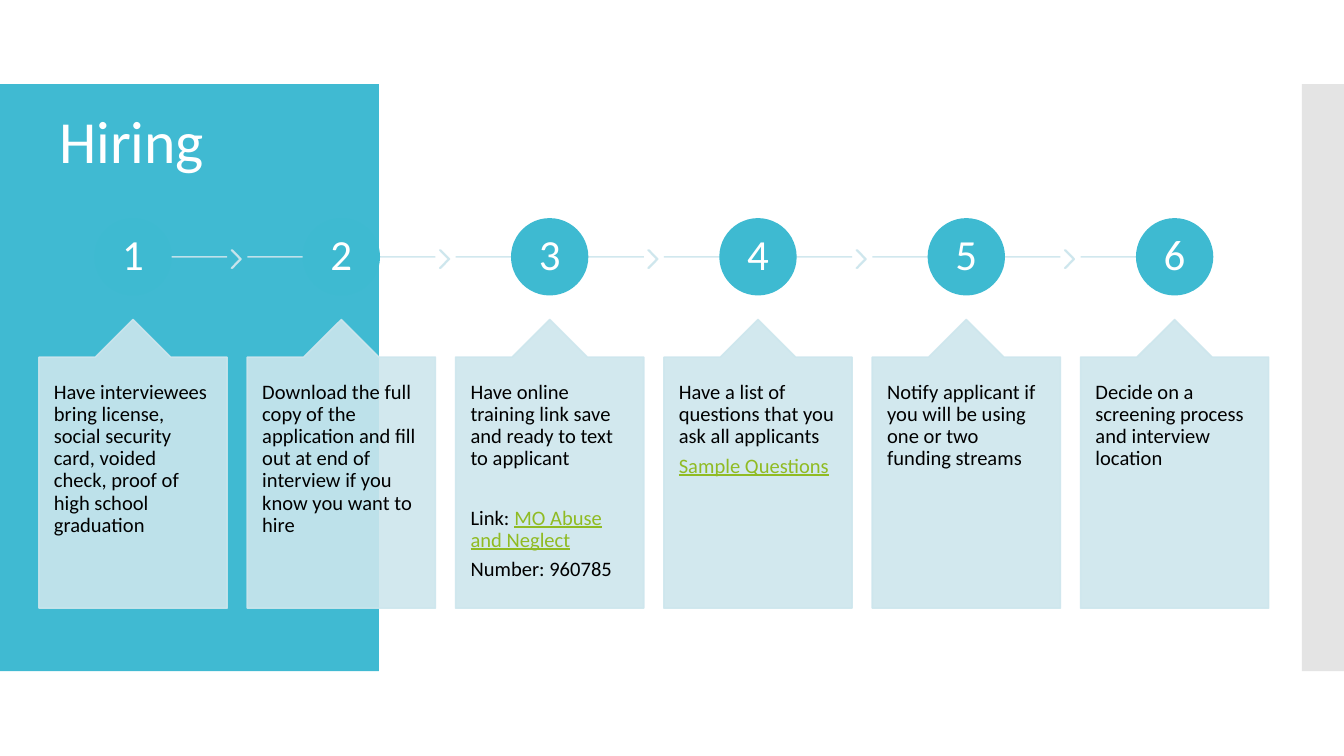
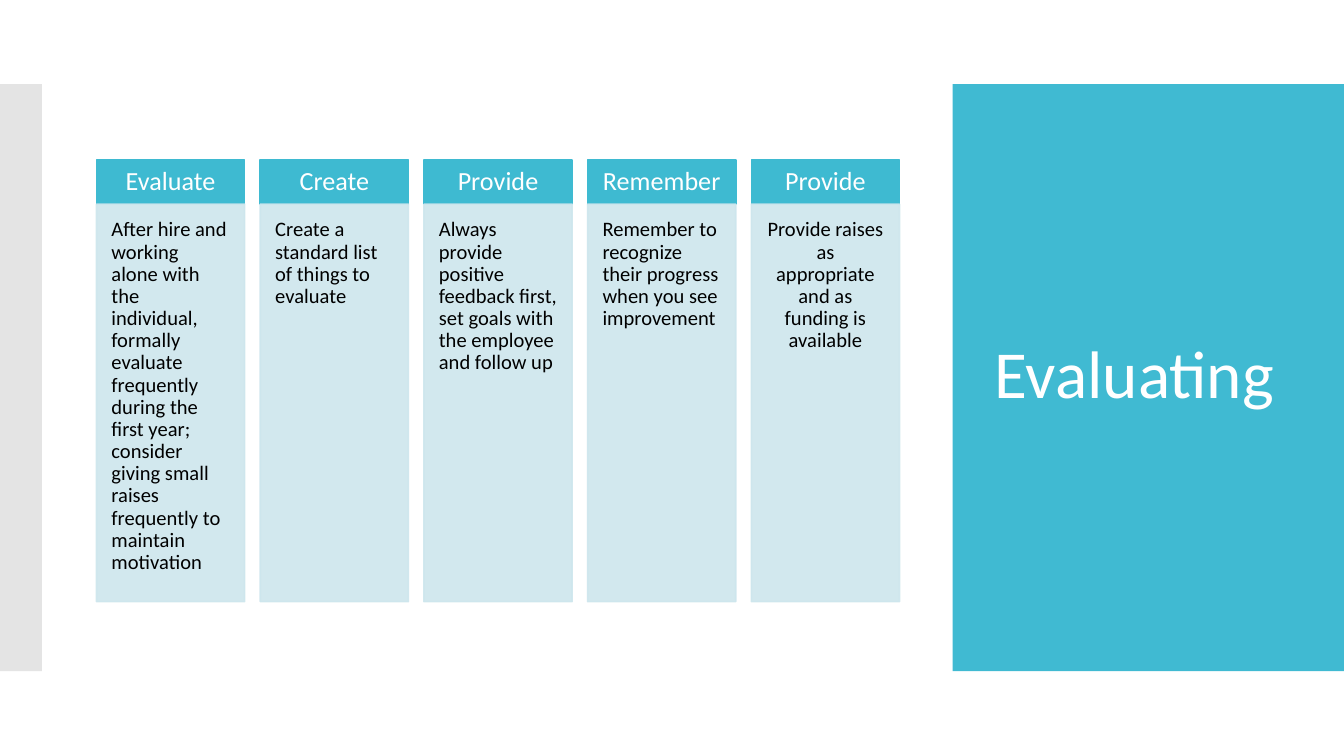
"""Build the Hiring and Evaluating slides."""
from dataclasses import dataclass
from typing import NamedTuple

from lxml import etree
from pptx import Presentation
from pptx import util as u
from pptx.dml import color as c
from pptx.enum import shapes as s
from pptx.enum import text as t
from pptx.oxml import ns


@dataclass(frozen=True)
class Theme:
    font: str = "Calibri"
    panel: str = "40BAD2"
    accent: str = "3EBAD1"
    pale: str = "CDE6ED"
    grey: str = "C8C8C8"
    white: str = "FFFFFF"
    black: str = "000000"
    link: str = "90BB23"
    pale_opacity: int = 89
    grey_opacity: int = 49
    outline: float = 0.85
    line_spacing: float = 0.9
    hiring_title: int = 32
    evaluating_title: int = 36
    number: int = 23
    header: int = 14
    body: int = 11


class Box(NamedTuple):
    left: float
    top: float
    width: float
    height: float


class Line(NamedTuple):
    text: str
    link: str = ""
    space_before: float = 0


class TextStyle(NamedTuple):
    size: int
    color: str
    inset_x: float
    inset_y: float
    align: t.PP_ALIGN = t.PP_ALIGN.LEFT
    anchor: t.MSO_ANCHOR = t.MSO_ANCHOR.TOP


class Column(NamedTuple):
    header: str
    body: str
    align: t.PP_ALIGN = t.PP_ALIGN.LEFT


THEME = Theme()
SLIDE_WIDTH, SLIDE_HEIGHT = 720, 405
BAND_TOP, BAND_HEIGHT = 45, 314.5
BAND_WIDTH = 22.5
STEP_LEFT, STEP_PITCH, STEP_WIDTH = 20.9, 111.6, 100.8
CIRCLE_SIZE, LINE_TOP = 40.6, 137.6
COLUMN_LEFT, COLUMN_PITCH, COLUMN_WIDTH = 51.7, 87.7, 79.4

CENTER, MIDDLE = t.PP_ALIGN.CENTER, t.MSO_ANCHOR.MIDDLE
NUMBER_STYLE = TextStyle(THEME.number, THEME.white, 1.5, 1.5, CENTER, MIDDLE)
STEP_STYLE = TextStyle(THEME.body, THEME.black, 8, 13)
HEADER_STYLE = TextStyle(THEME.header, THEME.white, 6.4, 6.4, CENTER, MIDDLE)
COLUMN_STYLE = TextStyle(THEME.body, THEME.black, 8, 8)

STEPS = (
    (Line("Have interviewees bring license, social security card, voided check, "
          "proof of high school graduation"),),
    (Line("Download the full copy of the application and fill out at end of "
          "interview if you know you want to hire"),),
    (Line("Have online training link save and ready to text to applicant"),
     Line("Link: ", "MO Abuse and Neglect", 19.9),
     Line("Number: 960785", space_before=3.9)),
    (Line("Have a list of questions that you ask all applicants"),
     Line("", "Sample Questions", 3.9)),
    (Line("Notify applicant if you will be using one or two funding streams"),),
    (Line("Decide on a screening process and interview location"),),
)

COLUMNS = (
    Column("Evaluate", "After hire and working alone with the individual, formally evaluate "
           "frequently during the first year; consider giving small raises frequently "
           "to maintain motivation"),
    Column("Create", "Create a standard list of things to evaluate"),
    Column("Provide", "Always provide positive feedback first, set goals with the employee "
           "and follow up"),
    Column("Remember", "Remember to recognize their progress when you see improvement"),
    Column("Provide", "Provide raises as appropriate and as funding is available", CENTER),
)


def rgb(value: str) -> c.RGBColor:
    """Turn a hex value into a colour."""
    return c.RGBColor.from_string(value)


def set_opacity(shape, percent: int) -> None:
    """Make the fill and line of a shape translucent."""
    for color in shape.element.spPr.iter(ns.qn("a:srgbClr")):
        etree.SubElement(color, ns.qn("a:alpha")).set("val", str(percent * 1000))


def add_shape(slide, kind, box: Box, color: str, opacity: int = 100,
              outlined: bool = True, adjustments: tuple = ()):
    """Add a flat preset shape."""
    shape = slide.shapes.add_shape(kind, *map(u.Pt, box))
    shape.shadow.inherit = False
    shape.fill.solid()
    shape.fill.fore_color.rgb = rgb(color)
    if outlined:
        shape.line.color.rgb = rgb(color)
        shape.line.width = u.Pt(THEME.outline)
    else:
        shape.line.fill.background()
    for index, value in enumerate(adjustments):
        shape.adjustments[index] = value
    if opacity < 100:
        set_opacity(shape, opacity)
    return shape


def add_line(slide, left: float, right: float) -> None:
    """Add a pale horizontal line between steps."""
    connector = slide.shapes.add_connector(
        s.MSO_CONNECTOR.STRAIGHT, *map(u.Pt, (left, LINE_TOP, right, LINE_TOP)))
    connector.line.color.rgb = rgb(THEME.pale)
    connector.line.width = u.Pt(THEME.outline)
    set_opacity(connector, THEME.pale_opacity)
    etree.SubElement(connector.element.spPr, ns.qn("a:effectLst"))


def write(shape, lines: tuple, style: TextStyle) -> None:
    """Write styled lines into a shape."""
    frame = shape.text_frame
    frame.word_wrap = True
    frame.auto_size = t.MSO_AUTO_SIZE.NONE
    frame.vertical_anchor = style.anchor
    frame.margin_left = frame.margin_right = u.Pt(style.inset_x)
    frame.margin_top = frame.margin_bottom = u.Pt(style.inset_y)
    for index, line in enumerate(lines):
        paragraph = frame.add_paragraph() if index else frame.paragraphs[0]
        paragraph.alignment = style.align
        paragraph.line_spacing = THEME.line_spacing
        paragraph.space_before = u.Pt(line.space_before)
        paragraph.font.name = THEME.font
        paragraph.font.size = u.Pt(style.size)
        paragraph.font.color.rgb = rgb(style.color)
        if line.text:
            paragraph.add_run().text = line.text
        if line.link:
            run = paragraph.add_run()
            run.text = line.link
            run.font.underline = True
            run.font.color.rgb = rgb(THEME.link)


def add_titled_slide(presentation, title: str, box: Box, style: TextStyle,
                     panel_left: float, panel_width: float, band_left: float):
    """Add a slide with its panel, side band and title."""
    slide = presentation.slides.add_slide(presentation.slide_layouts[5])
    rectangle = s.MSO_SHAPE.RECTANGLE
    add_shape(slide, rectangle, Box(panel_left, BAND_TOP, panel_width, BAND_HEIGHT),
              THEME.panel, outlined=False)
    add_shape(slide, rectangle, Box(band_left, BAND_TOP, BAND_WIDTH, BAND_HEIGHT),
              THEME.grey, THEME.grey_opacity, outlined=False)
    placeholder = slide.shapes.title
    placeholder.left, placeholder.top, placeholder.width, placeholder.height = map(u.Pt, box)
    write(placeholder, (Line(title),), style)
    placeholder.element.getparent().append(placeholder.element)
    return slide


def add_step(slide, index: int, lines: tuple) -> None:
    """Add one numbered step with its line, arrow and callout."""
    left = STEP_LEFT + index * STEP_PITCH
    middle = left + STEP_WIDTH / 2
    is_last = index == len(STEPS) - 1
    add_line(slide, left if index else middle, middle if is_last else left + STEP_WIDTH)
    if not is_last:
        add_shape(slide, s.MSO_SHAPE.CHEVRON, Box(left + 103.1, 134, 5.2, 9.6),
                  THEME.pale, THEME.pale_opacity, adjustments=(0.9,))
    circle = add_shape(slide, s.MSO_SHAPE.OVAL,
                       Box(middle - CIRCLE_SIZE / 2, LINE_TOP - CIRCLE_SIZE / 2,
                           CIRCLE_SIZE, CIRCLE_SIZE), THEME.accent)
    write(circle, (Line(str(index + 1)),), NUMBER_STYLE)
    callout = add_shape(slide, s.MSO_SHAPE.UP_ARROW_CALLOUT,
                        Box(left, 171.2, STEP_WIDTH, 154.6), THEME.pale,
                        THEME.pale_opacity, adjustments=(0.5, 0.2, 0.2, 1))
    write(callout, lines, STEP_STYLE)


def add_column(slide, index: int, column: Column) -> None:
    """Add one header with its text box below."""
    left = COLUMN_LEFT + index * COLUMN_PITCH
    rectangle = s.MSO_SHAPE.RECTANGLE
    header = add_shape(slide, rectangle, Box(left, 85.6, COLUMN_WIDTH, 23.8), THEME.accent)
    write(header, (Line(column.header),), HEADER_STYLE)
    body = add_shape(slide, rectangle, Box(left, 109.4, COLUMN_WIDTH, 213),
                     THEME.pale, THEME.pale_opacity)
    write(body, (Line(column.body),), COLUMN_STYLE._replace(align=column.align))


def build_hiring(presentation) -> None:
    """Build the slide of hiring steps."""
    style = TextStyle(THEME.hiring_title, THEME.white, 7.2, 7.2)
    slide = add_titled_slide(presentation, "Hiring", Box(24.5, 52.6, 671, 45.4), style,
                             0, 203, SLIDE_WIDTH - BAND_WIDTH)
    for index, lines in enumerate(STEPS):
        add_step(slide, index, lines)


def build_evaluating(presentation) -> None:
    """Build the slide of evaluation columns."""
    style = TextStyle(THEME.evaluating_title, THEME.white, 7.2, 3.6, anchor=MIDDLE)
    slide = add_titled_slide(presentation, "Evaluating", Box(525.6, 66.2, 174.2, 271.4), style,
                             510.4, 209.6, 0)
    for index, column in enumerate(COLUMNS):
        add_column(slide, index, column)


def main() -> None:
    """Build and save the presentation."""
    presentation = Presentation()
    presentation.slide_width = u.Pt(SLIDE_WIDTH)
    presentation.slide_height = u.Pt(SLIDE_HEIGHT)
    build_hiring(presentation)
    build_evaluating(presentation)
    presentation.save("out.pptx")


if __name__ == "__main__":
    main()
